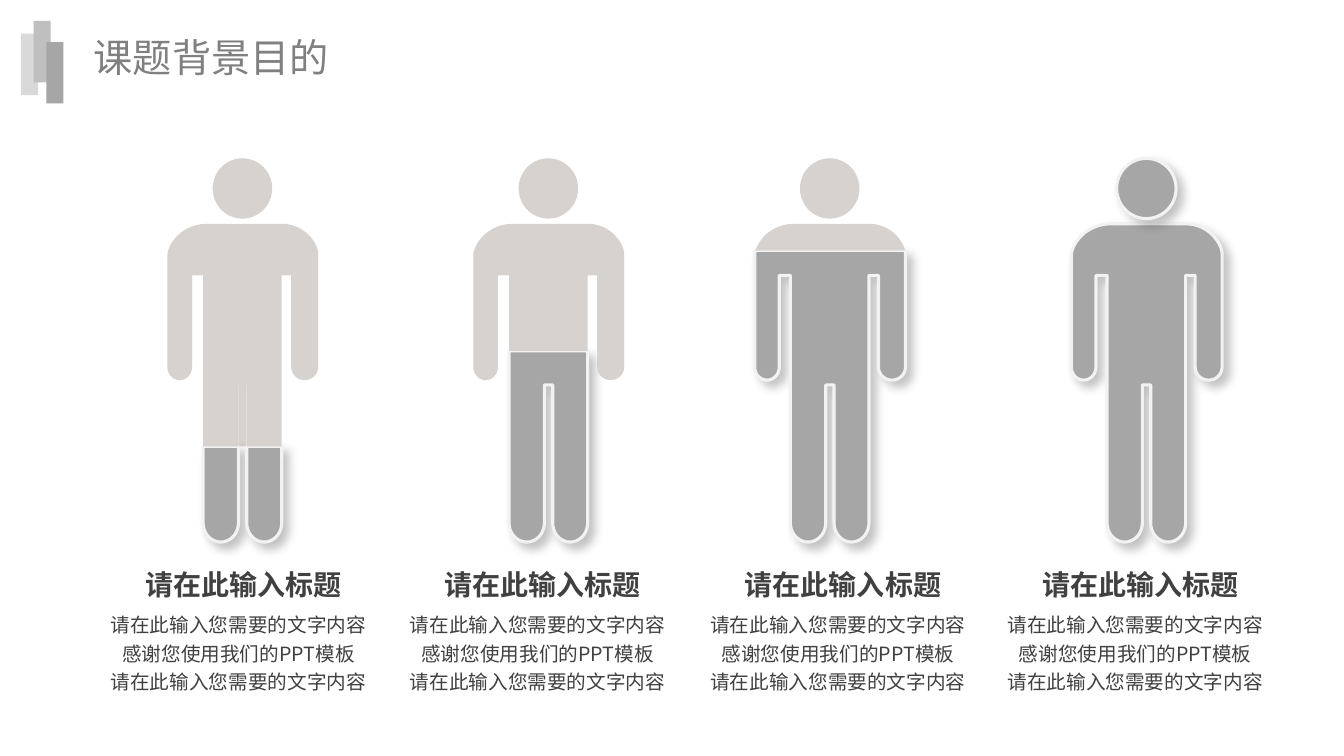
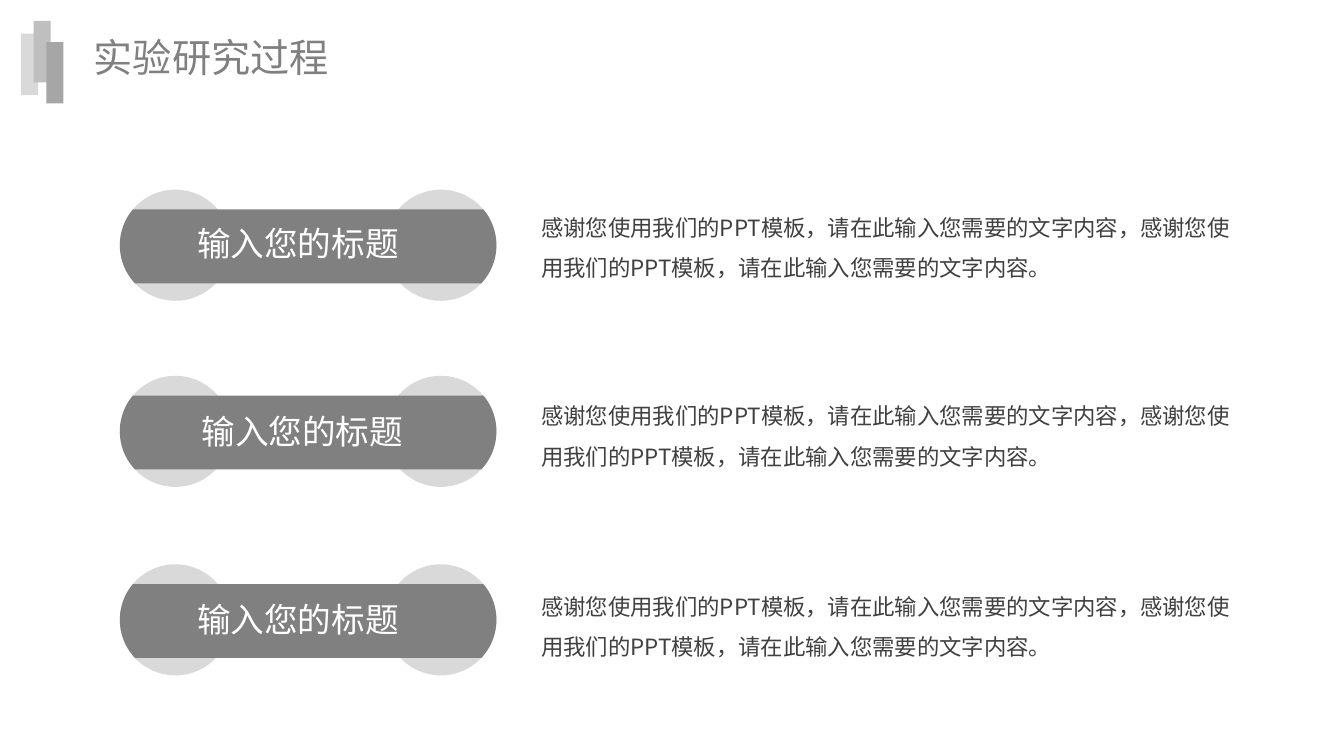
from itertools import groupby
from math import asin, cos, pi, sin

from lxml.etree import SubElement
from pptx import Presentation
from pptx.dml.color import RGBColor
from pptx.enum.shapes import MSO_SHAPE
from pptx.enum.text import MSO_ANCHOR, MSO_AUTO_SIZE, PP_ALIGN
from pptx.oxml.ns import qn
from pptx.util import Cm, Pt

FONT = "Noto Sans CJK SC"
COLORS = {
    "pale": "D9D9D9",
    "silver": "BFBFBF",
    "gray": "A6A6A6",
    "dark": "808080",
    "text": "404040",
    "white": "FFFFFF",
    "edge": "F2F2F2",
    "body": "D5D2CF",
    "shadow": "000000",
}

# Lengths of the person in cm, from the top left of the shoulders
CROTCH, ARMPIT = 4.06, 1.3
HAND, FOOT = 3.61, 7.54
LEG_GAP = (1.79, 2.0)

# Person left, caption left, height from which the person is filled
PEOPLE = [(4.22, 1.78, 5.61), (11.93, 9.32, 3.2), (19.02, 16.89, 0.67), (27.0, 24.38, 0)]
CAPTION_TITLE = "请在此输入标题"
CAPTION_LINES = ["请在此输入您需要的文字内容", "感谢您使用我们的PPT模板", "请在此输入您需要的文字内容"]

# Capsule top, label left, label top, description top
STEPS = [(4.78, 4.72, 5.49, 4.93), (9.47, 4.83, 10.24, 9.68), (14.22, 4.72, 14.96, 14.48)]
STEP_LABEL = "输入您的标题"
STEP_TEXT = "感谢您使用我们的PPT模板，请在此输入您需要的文字内容，" * 2
STEP_TEXT = STEP_TEXT[:-1] + "。"


def color(name):
    return RGBColor.from_string(COLORS[name])


def paint(shape, fill):
    shape.shadow.inherit = False
    shape.fill.solid()
    shape.fill.fore_color.rgb = color(fill)
    shape.line.fill.background()


def raise_up(shape):
    """Gives a painted shape a light edge and a soft shadow."""
    shape.line.color.rgb = color("edge")
    shape.line.width = Pt(2.25)
    effects = shape.element.spPr.find(qn("a:effectLst"))
    shadow = SubElement(effects, qn("a:outerShdw"), blurRad=str(Pt(7)), dist=str(Pt(5.9)),
                        dir="2700000", algn="tl", rotWithShape="0")
    tone = SubElement(shadow, qn("a:srgbClr"), val=COLORS["shadow"])
    SubElement(tone, qn("a:alpha"), val="23000")


def add_preset(shapes, kind, left, top, width, height, fill):
    shape = shapes.add_shape(kind, Cm(left), Cm(top), Cm(width), Cm(height))
    paint(shape, fill)
    return shape


def add_outline(shapes, left, top, points, fill):
    places = [(Cm(left + x), Cm(top + y)) for x, y in points]
    builder = shapes.build_freeform(*places[0])
    builder.add_line_segments(places[1:], close=True)
    shape = builder.convert_to_shape()
    paint(shape, fill)
    return shape


def write(frame, lines, size, tone, bold=False, align=PP_ALIGN.LEFT, spacing=None):
    for number, line in enumerate(lines):
        para = frame.add_paragraph() if number else frame.paragraphs[0]
        para.alignment = align
        if spacing:
            para.line_spacing = spacing
        span = para.add_run()
        span.text = line
        span.font.size = Pt(size)
        span.font.bold = bold
        span.font.name = FONT
        span.font.color.rgb = color(tone)
        SubElement(span.font._element, qn("a:ea"), typeface=FONT)


def add_text(slide, left, top, width, height, lines, size, tone, wrap=True, **style):
    box = slide.shapes.add_textbox(Cm(left), Cm(top), Cm(width), Cm(height))
    box.text_frame.word_wrap = wrap
    write(box.text_frame, lines, size, tone, **style)


def add_titled_slide(deck, title):
    slide = deck.slides.add_slide(deck.slide_layouts[5])
    box = slide.shapes.title
    box.left, box.top, box.width, box.height = Cm(2.11), Cm(0.71), Cm(6.5), Cm(1.45)
    frame = box.text_frame
    frame.word_wrap = False
    frame.auto_size = MSO_AUTO_SIZE.NONE
    frame.vertical_anchor = MSO_ANCHOR.TOP
    write(frame, [title], 28, "dark")
    return slide


def put_bars_on_layout(slide):
    """Builds the corner bars and moves them to the layout that slides share."""
    group = slide.shapes.add_group_shape()
    for left, top, fill in [(0.53, 0.85, "pale"), (0.85, 0.53, "silver"), (1.17, 1.06, "gray")]:
        add_preset(group.shapes, MSO_SHAPE.RECTANGLE, left, top, 0.43, 1.55, fill)
    for number, props in enumerate(group.element.xpath(".//p:cNvPr"), 20):
        props.set("id", str(number))
    slide.slide_layout.element.cSld.spTree.insert(2, group.element)


def curve(start, first, second, end, steps=16):
    """Points of a cubic curve."""
    points = []
    for step in range(steps + 1):
        t = step / steps
        weights = ((1 - t) ** 3, 3 * t * (1 - t) ** 2, 3 * t * t * (1 - t), t ** 3)
        points.append(tuple(sum(w * p[axis] for w, p in zip(weights, (start, first, second, end)))
                            for axis in (0, 1)))
    return points


def arc(center_x, center_y, radius_x, radius_y, start, end, steps=20):
    angles = [start + (end - start) * step / steps for step in range(steps + 1)]
    return [(center_x + radius_x * cos(a), center_y + radius_y * sin(a)) for a in angles]


def limb_end(left, right, top, depth):
    """Rounded end of an arm or leg, from left to right."""
    return arc((left + right) / 2, top, (right - left) / 2, depth, pi, 0)


def person_outline():
    inner_left, inner_right = LEG_GAP
    return [
        *curve((2.87, 0), (2.87, 0), (0.97, 0), (0.97, 0), 1),
        *curve((0.97, 0), (0.28, 0.03), (0, 0.58), (0, 0.79)),
        *limb_end(0, 0.62, HAND, 0.33),
        (0.62, ARMPIT), (0.9, ARMPIT),
        *limb_end(0.9, inner_left, FOOT, 0.48),
        (inner_left, CROTCH), (inner_right, CROTCH),
        *limb_end(inner_right, 2.88, FOOT, 0.48),
        (2.88, ARMPIT), (3.12, ARMPIT),
        *limb_end(3.12, 3.8, HAND, 0.33),
        *curve((3.8, 0.76), (3.8, 0.51), (3.48, 0), (2.87, 0))[:-1],
    ]


def split_outline(outline, cut):
    """Returns the part above the cut and the list of parts below it."""
    ring = []
    for (x, y), (next_x, next_y) in zip(outline, outline[1:] + outline[:1]):
        ring.append((x, y))
        if (y - cut) * (next_y - cut) < 0:
            ring.append((x + (next_x - x) * (cut - y) / (next_y - y), cut))
    upper = [point for point in ring if point[1] <= cut]
    lower = [list(part) for below, part in groupby(ring, lambda p: p[1] >= cut) if below]
    return upper, lower


def add_person(slide, left, top, cut):
    """Draws a person whose legs, and all joined to them, are filled below the cut."""
    shapes = slide.shapes
    torso_top = top + 1.65
    upper, lower = split_outline(person_outline(), cut)
    if cut > CROTCH:
        add_preset(shapes, MSO_SHAPE.RECTANGLE, left + LEG_GAP[0], torso_top + CROTCH,
                   LEG_GAP[1] - LEG_GAP[0], cut - CROTCH, "body")
    for part in lower:
        has_foot = max(y for _, y in part) > FOOT
        shape = add_outline(shapes, left, torso_top, part, "gray" if has_foot else "body")
        if has_foot:
            raise_up(shape)
    if cut:
        add_outline(shapes, left, torso_top, upper, "body")
    head = add_preset(shapes, MSO_SHAPE.OVAL, left + 1.14, top, 1.5, 1.52,
                      "body" if cut else "gray")
    if not cut:
        raise_up(head)


def add_caption(slide, left, top):
    add_text(slide, left + 1.6, top, 5.51, 1.12, [CAPTION_TITLE], 20, "text",
             wrap=False, bold=True, align=PP_ALIGN.CENTER)
    add_text(slide, left, top + 1.04, 8.46, 2.36, CAPTION_LINES, 14, "text",
             align=PP_ALIGN.CENTER, spacing=1.2)


def add_capsule(slide, left, top):
    """Draws two discs and the band that covers their middle."""
    radius, right = 1.4, 6.69
    for disc_left in (left, left + right):
        add_preset(slide.shapes, MSO_SHAPE.OVAL, disc_left, top, 2 * radius, 2 * radius, "pale")
    upper, lower = asin(-0.9 / radius), asin(0.96 / radius)
    band = (arc(right + radius, radius, radius, radius, upper, lower)
            + arc(radius, radius, radius, radius, pi - lower, pi - upper))
    add_outline(slide.shapes, left, top, band, "dark")


def build_background(deck):
    slide = add_titled_slide(deck, "课题背景目的")
    put_bars_on_layout(slide)
    for person_left, caption_left, cut in PEOPLE:
        add_person(slide, person_left, 3.99, cut)
        add_caption(slide, caption_left, 14.17)


def build_process(deck):
    slide = add_titled_slide(deck, "实验研究过程")
    for top, label_left, label_top, text_top in STEPS:
        add_capsule(slide, 3.02, top)
        add_text(slide, label_left, label_top, 5.64, 1.27, [STEP_LABEL], 24, "white", wrap=False)
        add_text(slide, 13.39, text_top, 18.31, 2.13, [STEP_TEXT], 16, "text", spacing=1.5)


def main():
    deck = Presentation()
    deck.slide_width, deck.slide_height = Cm(33.87), Cm(19.05)
    build_background(deck)
    build_process(deck)
    deck.save("out.pptx")


if __name__ == "__main__":
    main()
